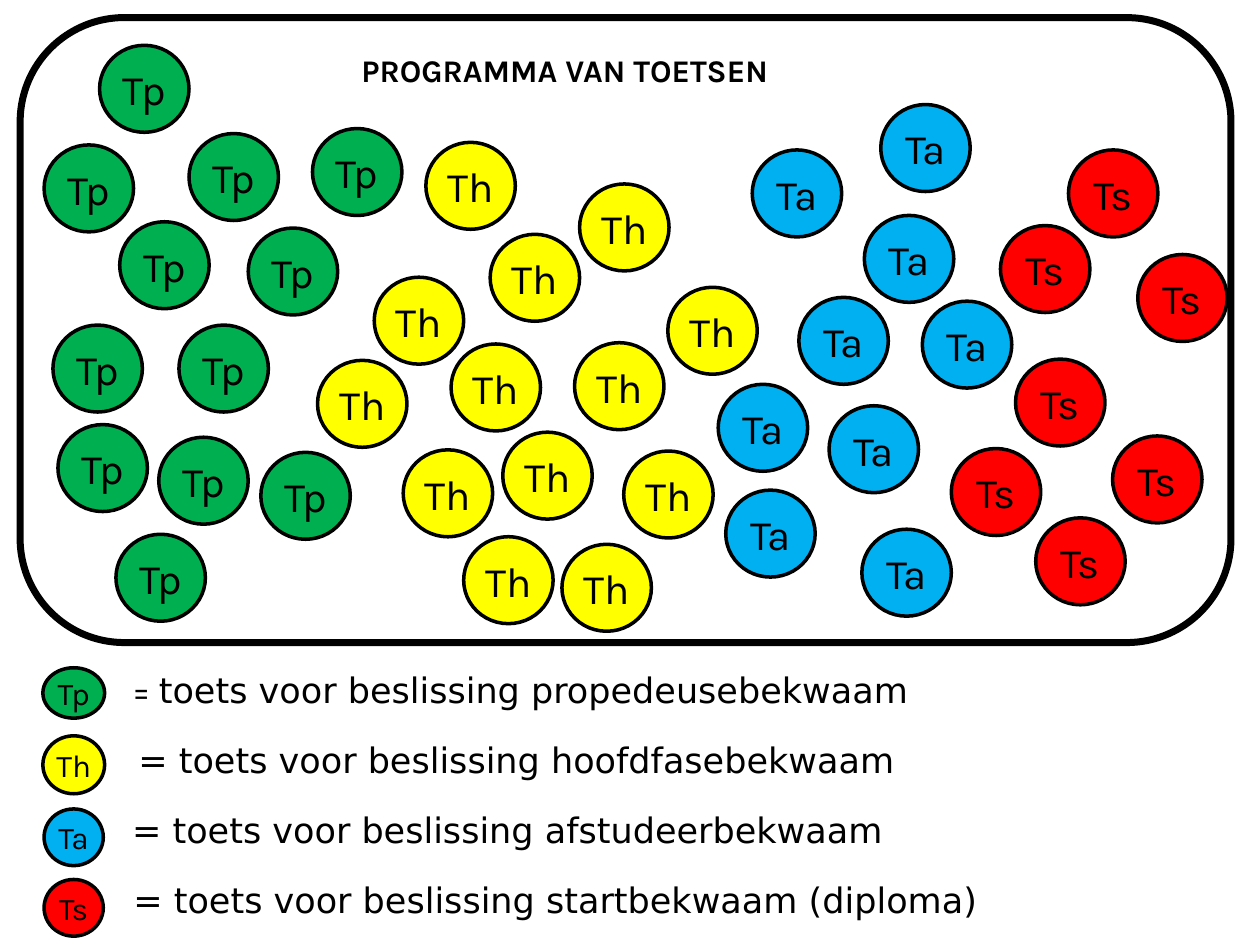
import pptx
import pptx.util
from pptx.dml.color import RGBColor
from pptx.enum.shapes import MSO_SHAPE
from pptx.enum.text import MSO_ANCHOR, PP_ALIGN
from pptx.util import Inches

BLACK = RGBColor(0x00, 0x00, 0x00)
GREEN = RGBColor(0x00, 0xB0, 0x50)
YELLOW = RGBColor(0xFF, 0xFF, 0x00)
BLUE = RGBColor(0x00, 0xB0, 0xF0)
RED = RGBColor(0xFF, 0x00, 0x00)

LABEL_FONT = "Karla"
LEGEND_FONT = "DejaVu Sans"
TEST_SIZE = (0.71, 0.69)

TEST_COLOURS = {"Tp": GREEN, "Th": YELLOW, "Ta": BLUE, "Ts": RED}

# Left and top of every test in the programme
TEST_POSITIONS = {
    "Tp": [(0.79, 0.36), (0.35, 1.15), (1.5, 1.06), (2.48, 1.02),
           (0.95, 1.76), (1.97, 1.81), (0.42, 2.58), (1.42, 2.58),
           (0.46, 3.37), (1.26, 3.47), (2.07, 3.59), (0.92, 4.24)],
    "Th": [(3.38, 1.13), (4.6, 1.46), (3.89, 1.86), (2.97, 2.2),
           (5.3, 2.28), (3.58, 2.73), (4.56, 2.72), (2.52, 2.86),
           (3.2, 3.57), (3.99, 3.43), (4.95, 3.58), (3.68, 4.26),
           (4.46, 4.32)],
    "Ta": [(6.99, 0.83), (5.97, 1.19), (6.86, 1.71), (6.34, 2.36),
           (7.32, 2.39), (5.7, 3.05), (6.58, 3.22), (5.76, 3.89),
           (6.84, 4.2)],
    "Ts": [(8.48, 1.19), (7.94, 1.79), (9.03, 2.02), (8.06, 2.85),
           (8.83, 3.46), (7.55, 3.56), (8.22, 4.11)],
}

# Code, circle box, text box, and runs of (text, font)
LEGEND = [
    ("Tp", (0.34, 5.3, 0.49, 0.4), (0.95, 5.26, 6.95, 0.44),
     [("= ", LABEL_FONT),
      ("toets voor beslissing propedeusebekwaam", LEGEND_FONT)]),
    ("Th", (0.34, 5.84, 0.49, 0.46), (1, 5.81, 6.57, 0.44),
     [("= toets voor beslissing hoofdfasebekwaam", LEGEND_FONT)]),
    ("Ta", (0.35, 6.42, 0.47, 0.45), (0.95, 6.37, 6.39, 0.44),
     [("= toets voor beslissing afstudeerbekwaam", LEGEND_FONT)]),
    ("Ts", (0.35, 6.98, 0.47, 0.45), (0.96, 6.92, 7.52, 0.44),
     [("= toets voor beslissing startbekwaam (diploma)", LEGEND_FONT)]),
]


def set_attributes(target, values):
    for name, value in values.items():
        setattr(target, name, value)


def add_run(paragraph, text, font_name, size, bold=False):
    run = paragraph.add_run()
    run.text = text
    set_attributes(run.font, {
        "name": font_name, "size": pptx.util.Pt(size), "bold": bold})
    run.font.color.rgb = BLACK


def add_outlined_shape(slide, kind, box, line_width, fill=None):
    shape = slide.shapes.add_shape(kind, *map(Inches, box))
    shape.shadow.inherit = False
    if fill is None:
        shape.fill.background()
    else:
        shape.fill.solid()
        shape.fill.fore_color.rgb = fill
    shape.line.color.rgb = BLACK
    shape.line.width = pptx.util.Pt(line_width)
    return shape


def add_test(slide, code, box, size):
    shape = add_outlined_shape(
        slide, MSO_SHAPE.OVAL, box, 2, TEST_COLOURS[code])
    set_attributes(shape.text_frame, {
        "word_wrap": False, "vertical_anchor": MSO_ANCHOR.MIDDLE})
    paragraph = shape.text_frame.paragraphs[0]
    paragraph.alignment = PP_ALIGN.CENTER
    add_run(paragraph, code, LABEL_FONT, size)


def add_text(slide, box, runs, size, bold=False):
    text_box = slide.shapes.add_textbox(*map(Inches, box))
    text_box.text_frame.word_wrap = True
    paragraph = text_box.text_frame.paragraphs[0]
    for text, font_name in runs:
        add_run(paragraph, text, font_name, size, bold)


def main():
    presentation = pptx.Presentation()
    set_attributes(presentation, {
        "slide_width": Inches(10), "slide_height": Inches(7.5)})
    slide = presentation.slides.add_slide(presentation.slide_layouts[6])

    # Tests in the programme
    for code, positions in TEST_POSITIONS.items():
        for position in positions:
            add_test(slide, code, position + TEST_SIZE, 24)

    # Frame and title
    add_outlined_shape(
        slide, MSO_SHAPE.ROUNDED_RECTANGLE, (0.16, 0.14, 9.61, 4.96), 4)
    add_text(slide, (2.77, 0.36, 4.36, 0.4),
             [("PROGRAMMA VAN TOETSEN", LABEL_FONT)], 18, bold=True)

    # Legend
    for code, circle_box, text_box, runs in LEGEND:
        add_test(slide, code, circle_box, 18)
        add_text(slide, text_box, runs, 20)

    presentation.save("out.pptx")


if __name__ == "__main__":
    main()
